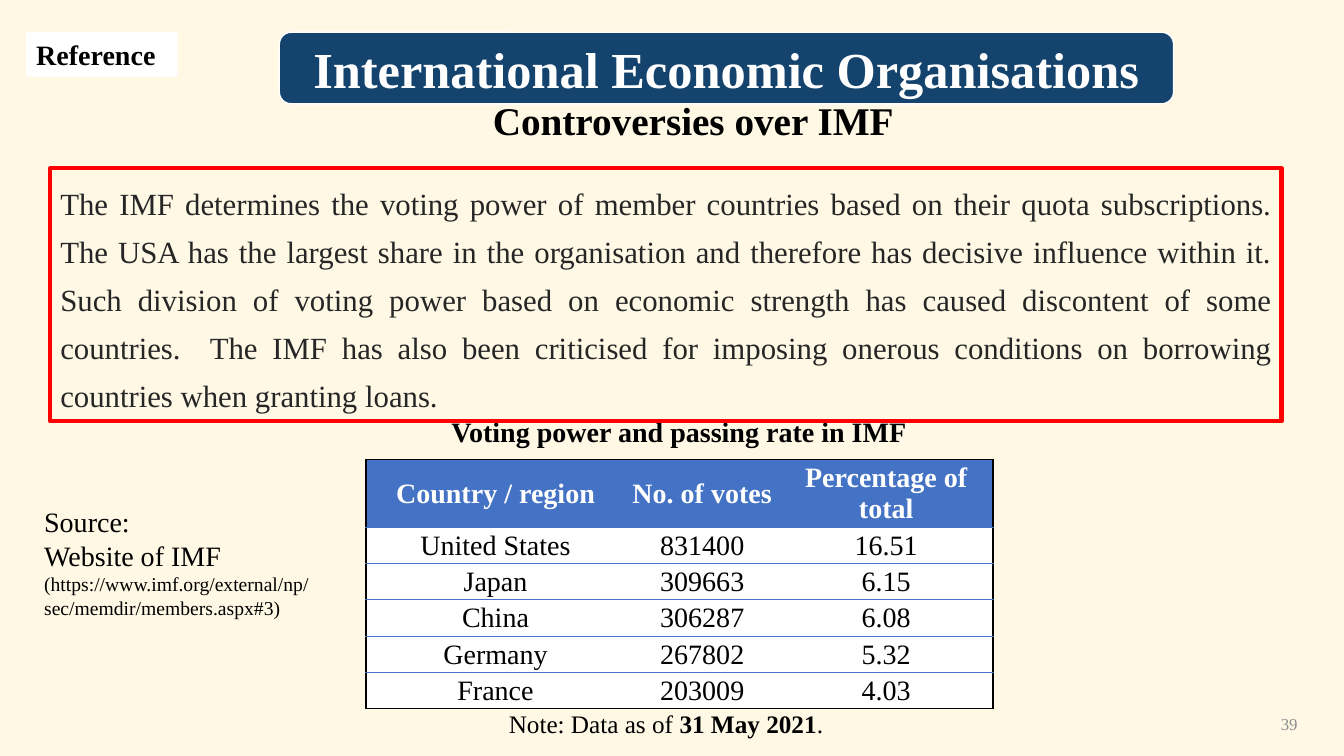
from lxml.etree import SubElement
from pptx import Presentation
from pptx.dml.color import RGBColor
from pptx.enum.shapes import MSO_SHAPE
from pptx.enum.text import MSO_ANCHOR, MSO_AUTO_SIZE, PP_ALIGN
from pptx.oxml.ns import qn
from pptx.util import Inches, Pt

PAGE = (13.33, 7.5)
THEME = {
    "font": "Times New Roman",
    "colours": {"cream": "FFF8E5", "navy": "14446E", "blue": "4472C4", "red": "FF0000",
                "white": "FFFFFF", "black": "000000", "ink": "262626", "grey": "8C8C8C"},
    "sizes": {"title": 36, "subtitle": 28, "body": 22, "text": 20, "note": 18, "link": 14, "page": 12},
}
GROW = {"auto_size": MSO_AUTO_SIZE.SHAPE_TO_FIT_TEXT, "word_wrap": True, "vertical_anchor": MSO_ANCHOR.TOP}
MIDDLE = {"word_wrap": True, "vertical_anchor": MSO_ANCHOR.MIDDLE}
TITLE_FRAME = MIDDLE | {"margin_left": Inches(0.27), "margin_right": Inches(0.27),
                        "margin_top": Inches(0.03), "margin_bottom": Inches(0.03)}
LEFT, CENTRE = {"alignment": PP_ALIGN.LEFT}, {"alignment": PP_ALIGN.CENTER}
RIGHT = {"alignment": PP_ALIGN.RIGHT}
JUSTIFIED = {"alignment": PP_ALIGN.JUSTIFY, "line_spacing": 1.3}

ARGUMENT = (
    "The IMF determines the voting power of member countries based on their quota subscriptions. "
    "The USA has the largest share in the organisation and therefore has decisive influence within it. "
    "Such division of voting power based on economic strength has caused discontent of some countries.  "
    "The IMF has also been criticised for imposing onerous conditions on borrowing countries when granting loans."
)
VOTES = [
    ("Country / region", "No. of votes", "Percentage of total"),
    ("United States", "831400", "16.51"),
    ("Japan", "309663", "6.15"),
    ("China", "306287", "6.08"),
    ("Germany", "267802", "5.32"),
    ("France", "203009", "4.03"),
]
VOTES_PLACE = (27.23, 60.8, 46.66, 32.93)
VOTES_COLUMNS = (2.57, 1.53, 2.12)
VOTES_ROWS = (0.67,) + (0.36,) * 5

# Each run: text, size, colour, bold
TEXTS = [
    ((74.79, 93.07, 22.5, 5.33), MIDDLE, RIGHT, [[("39", "page", "grey", False)]]),
    ((17.33, 54.13, 66.39, 5.87), GROW, CENTRE,
     [[("Voting power and passing rate in IMF", "text", "black", True)]]),
    ((2.55, 66.13, 22.5, 16.67), GROW, LEFT,
     [[("Source:", "text", "black", False)],
      [("Website of IMF", "text", "black", False)],
      [("(https://www.imf.org/external/np/sec/memdir/members.aspx#3)", "link", "black", False)]]),
    ((20.86, 12.13, 61.44, 7.6), GROW, CENTRE, [[("Controversies over IMF", "subtitle", "black", True)]]),
    ((36.98, 93.07, 25.13, 5.33), GROW | {"word_wrap": False}, CENTRE,
     [[("Note: Data as of ", "note", "black", False), ("31 May 2021", "note", "black", True),
       (".", "note", "black", False)]]),
]
PANELS = [
    ((3.75, 22.27, 91.6, 33.47), MSO_SHAPE.RECTANGLE, None, ("red", 3), GROW, JUSTIFIED,
     [[(ARGUMENT, "body", "ink", False)]]),
    ((1.95, 4.27, 11.25, 5.87), MSO_SHAPE.RECTANGLE, "white", None, GROW, LEFT,
     [[("Reference", "text", "black", True)]]),
    ((20.78, 4.27, 66.54, 9.47), MSO_SHAPE.ROUNDED_RECTANGLE, "navy", ("white", 1), TITLE_FRAME, CENTRE,
     [[("International Economic Organisations", "title", "white", True)]]),
]


def colour(name):
    return RGBColor.from_string(THEME["colours"][name])


def located(shares):
    return [Inches(share / 100 * PAGE[i % 2]) for i, share in enumerate(shares)]


def apply(target, values):
    for key, value in values.items():
        setattr(target, key, value)


def paint(fill, name):
    if name is None:
        fill.background()
    else:
        fill.solid()
        fill.fore_color.rgb = colour(name)


def write(frame, frame_format, paragraph_format, paragraphs):
    apply(frame, frame_format)
    for i, runs in enumerate(paragraphs):
        paragraph = frame.add_paragraph() if i else frame.paragraphs[0]
        apply(paragraph, paragraph_format)
        for text, size, ink, bold in runs:
            run = paragraph.add_run()
            run.text = text
            apply(run.font, {"name": THEME["font"], "size": Pt(THEME["sizes"][size]), "bold": bold})
            run.font.color.rgb = colour(ink)


def rule(cell, side, line):
    edge = SubElement(cell._tc.get_or_add_tcPr(), qn(f"a:ln{side}"))
    if line is None:
        SubElement(edge, qn("a:noFill"))
    else:
        name, width = line
        edge.set("w", str(Pt(width)))
        SubElement(SubElement(edge, qn("a:solidFill")), qn("a:srgbClr")).set("val", THEME["colours"][name])


def add_votes(slide):
    votes = slide.shapes.add_table(len(VOTES), len(VOTES_COLUMNS), *located(VOTES_PLACE)).table
    for column, width in zip(votes.columns, VOTES_COLUMNS):
        column.width = Inches(width)
    for row, height in zip(votes.rows, VOTES_ROWS):
        row.height = Inches(height)
    outer, inner = ("black", 1), ("blue", 0.5)
    last_row, last_column = len(VOTES) - 1, len(VOTES_COLUMNS) - 1
    for r, record in enumerate(VOTES):
        ground, ink = ("white", "black") if r else ("blue", "white")
        for c, value in enumerate(record):
            cell = votes.cell(r, c)
            apply(cell, {"vertical_anchor": MSO_ANCHOR.MIDDLE, "margin_left": Inches(0.01),
                         "margin_right": Inches(0.01), "margin_top": Inches(0.01), "margin_bottom": 0})
            rule(cell, "L", None if c else outer)
            rule(cell, "R", outer if c == last_column else None)
            rule(cell, "T", inner if r else outer)
            rule(cell, "B", outer if r == last_row else inner)
            paint(cell.fill, ground)
            write(cell.text_frame, {}, CENTRE, [[(value, "text", ink, r == 0)]])


def main():
    deck = Presentation()
    deck.slide_width, deck.slide_height = map(Inches, PAGE)
    slide = deck.slides.add_slide(deck.slide_layouts[6])
    paint(slide.background.fill, "cream")
    add_votes(slide)
    for place, *content in TEXTS:
        write(slide.shapes.add_textbox(*located(place)).text_frame, *content)
    for place, outline, ground, border, *content in PANELS:
        panel = slide.shapes.add_shape(outline, *located(place))
        panel.shadow.inherit = False
        paint(panel.fill, ground)
        paint(panel.line.fill, border and border[0])
        if border:
            panel.line.width = Pt(border[1])
        write(panel.text_frame, *content)
    deck.save("out.pptx")


if __name__ == "__main__":
    main()
